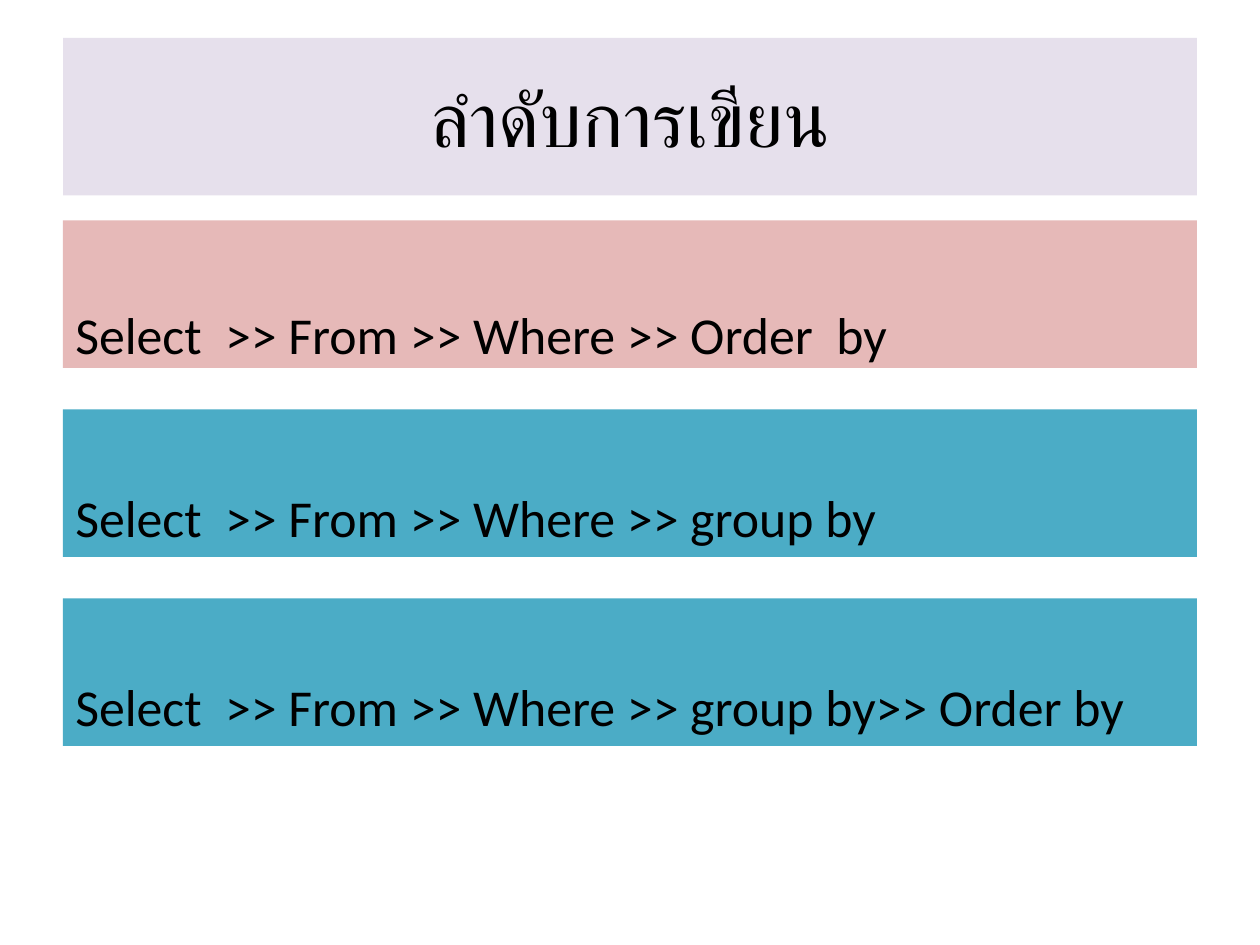
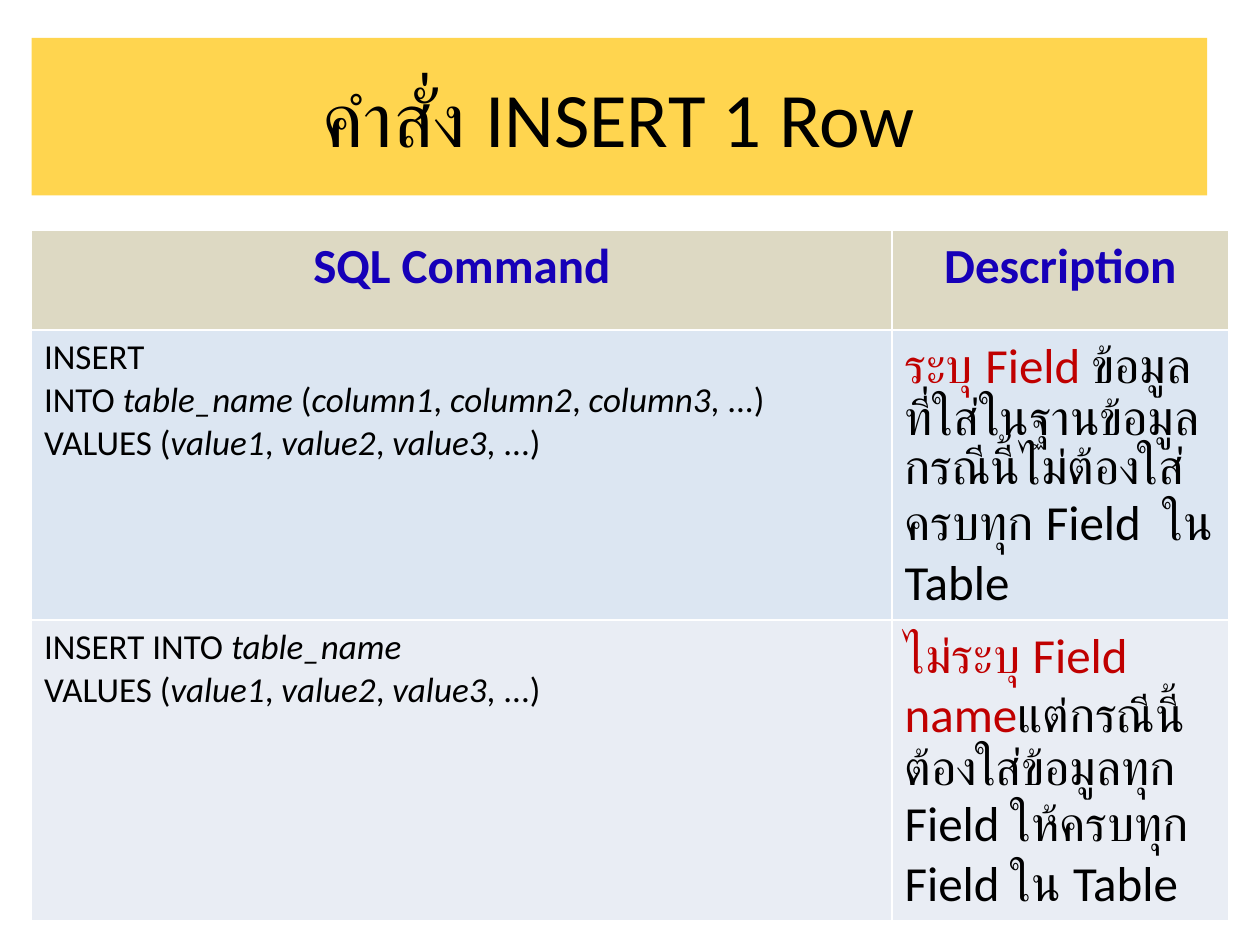
from dataclasses import dataclass

from pptx import Presentation
from pptx.dml.color import RGBColor
from pptx.enum.shapes import MSO_SHAPE
from pptx.enum.text import MSO_ANCHOR, PP_ALIGN
from pptx.util import Inches, Pt

RECTANGLE = MSO_SHAPE.RECTANGLE
MIDDLE, BOTTOM = MSO_ANCHOR.MIDDLE, MSO_ANCHOR.BOTTOM
LEFT, CENTER = PP_ALIGN.LEFT, PP_ALIGN.CENTER
TITLE_ONLY = 5
COLUMNS, ROWS = 40, 30


@dataclass(frozen=True)
class Theme:
    font: str = "Calibri"
    text: str = "000000"
    lavender: str = "E6E0EC"
    yellow: str = "FFD54F"
    rose: str = "E6B9B8"
    teal: str = "4BACC6"
    header_fill: str = "DDD9C3"
    header_text: str = "1600B8"
    row_fills: tuple = ("DCE6F2", "E9EDF4")
    accent: str = "C00000"
    title_size: float = 44
    band_size: float = 29.6
    table_size: float = 28
    code_size: float = 20


class Deck:
    """Builds slides on a grid in one shared style."""

    def __init__(self, theme):
        self.theme = theme
        self.presentation = Presentation()
        self.presentation.slide_width = Inches(10)
        self.presentation.slide_height = Inches(7.5)
        self.slide = None

    def across(self, columns):
        return round(self.presentation.slide_width * columns / COLUMNS)

    def down(self, rows):
        return round(self.presentation.slide_height * rows / ROWS)

    def box(self, left, top, width, height):
        return self.across(left), self.down(top), self.across(width), self.down(height)

    def paint(self, target, color):
        target.fill.solid()
        target.fill.fore_color.rgb = RGBColor.from_string(color)

    def format(self, paragraph, size, color=None, alignment=LEFT, bold=False):
        paragraph.alignment = alignment
        font = paragraph.font
        font.name, font.size, font.bold = self.theme.font, Pt(size), bold
        font.color.rgb = RGBColor.from_string(color or self.theme.text)

    def add_slide(self, title, fill, left, width):
        layout = self.presentation.slide_layouts[TITLE_ONLY]
        self.slide = self.presentation.slides.add_slide(layout)
        shape = self.slide.shapes.title
        shape.left, shape.top, shape.width, shape.height = self.box(left, 1.2, width, 5)
        self.paint(shape, fill)
        shape.text_frame.text = title
        shape.text_frame.vertical_anchor = MIDDLE
        self.format(shape.text_frame.paragraphs[0], self.theme.title_size, alignment=CENTER)

    def add_band(self, text, fill, top, bottom_margin):
        shape = self.slide.shapes.add_shape(RECTANGLE, *self.box(2, top, 36, 4.68))
        shape.shadow.inherit = False
        shape.line.fill.background()
        self.paint(shape, fill)
        frame = shape.text_frame
        frame.word_wrap = True
        frame.vertical_anchor = BOTTOM
        frame.margin_bottom = Inches(bottom_margin)
        frame.text = text
        self.format(frame.paragraphs[0], self.theme.band_size)

    def add_marked_text(self, paragraph, text, emphasize):
        """Adds text in which asterisks enclose the emphasized parts."""
        for index, part in enumerate(text.split("*")):
            for line_number, line in enumerate(part.split("\n")):
                if line_number:
                    paragraph.add_line_break()
                if line:
                    run = paragraph.add_run()
                    run.text = line
                    if index % 2:
                        emphasize(run.font)

    def italicize(self, font):
        font.italic = True

    def highlight(self, font):
        font.color.rgb = RGBColor.from_string(self.theme.accent)

    def fill_cell(self, cell, paragraphs, size, emphasize):
        frame = cell.text_frame
        for index, text in enumerate(paragraphs):
            paragraph = frame.add_paragraph() if index else frame.paragraphs[0]
            self.format(paragraph, size)
            self.add_marked_text(paragraph, text, emphasize)

    def add_command_table(self, headings, commands, left, top, widths, heights):
        theme = self.theme
        table = self.slide.shapes.add_table(
            len(heights), len(widths), *self.box(left, top, sum(widths), sum(heights))
        ).table
        for column, width in zip(table.columns, widths):
            column.width = self.across(width)
        for row, height in zip(table.rows, heights):
            row.height = self.down(height)
        for cell, heading in zip(table.rows[0].cells, headings):
            cell.text = heading
            self.paint(cell, theme.header_fill)
            self.format(cell.text_frame.paragraphs[0], theme.table_size,
                        theme.header_text, CENTER, bold=True)
        for index, (command, description) in enumerate(commands):
            command_cell, description_cell = table.rows[index + 1].cells
            self.fill_cell(command_cell, [command], theme.code_size, self.italicize)
            self.fill_cell(description_cell, description, theme.table_size, self.highlight)
            for cell in (command_cell, description_cell):
                self.paint(cell, theme.row_fills[index])


def main():
    theme = Theme()
    deck = Deck(theme)

    deck.add_slide("ลำดับการเขียน", theme.lavender, left=2, width=36)
    clause_orders = [
        ("Select  >> From >> Where >> Order  by", theme.rose, 0.02),
        ("Select  >> From >> Where >> group by", theme.teal, 0.07),
        ("Select  >> From >> Where >> group by>> Order by", theme.teal, 0.07),
    ]
    for index, (text, fill, bottom_margin) in enumerate(clause_orders):
        deck.add_band(text, fill, 7 + 6 * index, bottom_margin)

    deck.add_slide("คำสั่ง INSERT 1 Row", theme.yellow, left=1, width=37.32)
    values = "VALUES (*value1*,* value2*,* value3*, ...)"
    commands = [
        (
            "INSERT\nINTO *table_name* (*column1*,* column2*,* column3*, ...)\n" + values,
            ["*ระบุ Field *ข้อมูลที่ใส่ในฐานข้อมูล", "กรณีนี้ไม่ต้องใส่ครบทุก Field  ใน Table"],
        ),
        (
            "INSERT INTO *table_name*\n" + values,
            ["*ไม่ระบุ Field name*แต่กรณีนี้ต้องใส่ข้อมูลทุก Field ให้ครบทุก Field ใน Table"],
        ),
    ]
    deck.add_command_table(
        ["SQL Command", "Description"], commands, left=1, top=7.32,
        widths=[27.32, 10.68], heights=[3.16, 8.36, 6.36],
    )

    deck.presentation.save("out.pptx")


if __name__ == "__main__":
    main()
